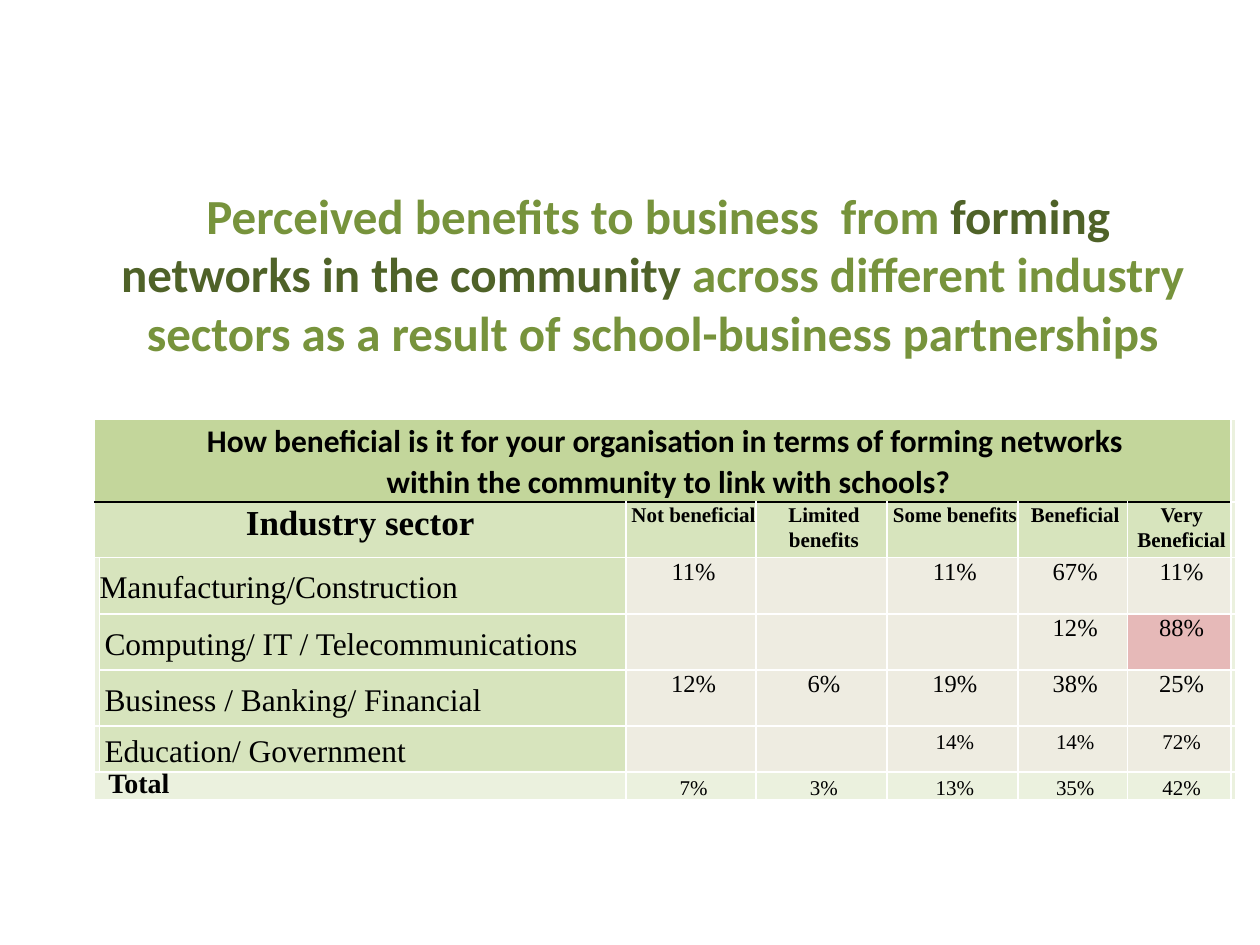
"""Build a slide on business benefits of forming community networks."""
from lxml.etree import SubElement
from pptx import Presentation
from pptx.dml.color import RGBColor
from pptx.enum.text import MSO_ANCHOR, PP_ALIGN
from pptx.oxml import parse_xml
from pptx.oxml.ns import nsdecls, qn
from pptx.util import Inches, Pt

COLORS = {
    "title": "77933C", "emphasis": "4F6228", "text": "000000",
    "question": "C3D69B", "label": "D7E4BD", "value": "EEECE1",
    "total": "EBF1DE", "highlight": "E6B9B8", "grid": "FFFFFF",
}
SERIF = "Times New Roman"
COLUMN_SHARES = [0.4, 41.8, 10.3, 10.4, 10.4, 8.7, 8.2, 0.3]
ROW_SHARES = [8.4, 5.9, 5.95, 5.95, 5.95, 4.85, 2.95]
QUESTION = [
    "How beneficial is it for your organisation in terms of forming networks",
    " within the community to link with schools?",
]
RATINGS = ["Not beneficial ", "Limited benefits", "Some benefits ", "Beneficial", "Very Beneficial"]
SECTORS = [
    ("Manufacturing/Construction", ["11%", "", "11%", "67%", "11%"]),
    ("Computing/ IT / Telecommunications", ["", "", "", "12%", "88%"]),
    ("Business / Banking/ Financial", ["12%", "6%", "19%", "38%", "25%"]),
    ("Education/ Government", ["", "", "14%", "14%", "72%"]),
]
TOTALS = ["7%", "3%", "13%", "35%", "42%"]


def write(paragraph, text, *, size, font=SERIF, color="text", bold=False,
          align=PP_ALIGN.CENTER, spacing=1.0):
    paragraph.alignment = align
    paragraph.line_spacing = spacing
    run = paragraph.add_run()
    run.text = text
    run.font.size = Pt(size)
    run.font.name = font
    run.font.bold = bold
    run.font.color.rgb = RGBColor.from_string(COLORS[color])


class SlideBuilder:
    def __init__(self, deck):
        self.width, self.height = deck.slide_width, deck.slide_height
        self.slide = deck.slides.add_slide(deck.slide_layouts[6])

    def across(self, percent):
        return round(self.width * percent / 100)

    def down(self, percent):
        return round(self.height * percent / 100)

    def heading(self, left, top, width, height, parts):
        box = self.slide.shapes.add_textbox(
            self.across(left), self.down(top), self.across(width), self.down(height))
        box.text_frame.word_wrap = True
        for text, color in parts:
            write(box.text_frame.paragraphs[0], text, size=28, font="Calibri",
                  color=color, bold=True)

    def table(self, left, top, columns, rows):
        frame = self.slide.shapes.add_table(
            len(rows), len(columns), self.across(left), self.down(top),
            self.across(sum(columns)), self.down(sum(rows)))
        grid = frame.table
        for column, share in zip(grid.columns, columns):
            column.width = self.across(share)
        for row, share in zip(grid.rows, rows):
            row.height = self.down(share)
        return grid

    def cell(self, cell, lines=(), *, fill, indent=0.04, anchor=MSO_ANCHOR.TOP, **style):
        cell.margin_left = Inches(indent)
        cell.margin_right = cell.margin_top = cell.margin_bottom = 0
        cell.vertical_anchor = anchor
        cell.fill.solid()
        cell.fill.fore_color.rgb = RGBColor.from_string(COLORS[fill])
        frame = cell.text_frame
        for index, line in enumerate(lines):
            write(frame.add_paragraph() if index else frame.paragraphs[0], line, **style)
        if not lines:
            SubElement(frame.paragraphs[0]._p, qn("a:endParaRPr"), sz="800")

    def borders(self, cell, **sides):
        properties = cell._tc.get_or_add_tcPr()
        for index, side in enumerate("LRTB"):
            color = COLORS[sides.get(side, "grid")]
            properties.insert(index, parse_xml(
                f'<a:ln{side} {nsdecls("a")} w="12700"><a:solidFill>'
                f'<a:srgbClr val="{color}"/></a:solidFill></a:ln{side}>'))


def fill_table(builder, grid):
    last_row, last_column = len(ROW_SHARES) - 1, len(COLUMN_SHARES) - 1
    filled = {}

    def put(row, column, *lines, **style):
        builder.cell(grid.cell(row, column), [line for line in lines if line], **style)
        filled[row, column] = True

    put(0, 0, *QUESTION, fill="question", size=18, font="Calibri", bold=True, spacing=1.07)
    put(1, 0, "Industry sector", fill="label", indent=0, size=20, bold=True, spacing=1.07)
    put(last_row, 0, "Total", fill="total", indent=0.11, anchor=MSO_ANCHOR.MIDDLE,
        size=16, bold=True, align=PP_ALIGN.LEFT, spacing=Pt(16))
    for column, (rating, total) in enumerate(zip(RATINGS, TOTALS), start=2):
        put(1, column, rating, fill="label", size=12, bold=True, spacing=1.07)
        put(last_row, column, total, fill="total", size=12, spacing=Pt(16))
    for row, (sector, values) in enumerate(SECTORS, start=2):
        put(row, 1, sector, fill="label", indent=0 if row == 2 else 0.04,
            anchor=MSO_ANCHOR.MIDDLE, size=18, align=PP_ALIGN.LEFT, spacing=1.15)
        for column, value in enumerate(values, start=2):
            put(row, column, value, fill="highlight" if value == "88%" else "value",
                size=12 if row == last_row - 1 else 14, spacing=Pt(16))

    for row in range(last_row + 1):
        for column in range(last_column + 1):
            if (row, column) not in filled:
                put(row, column, fill="total", indent=0)
            rule = {0: {"B": "text"}, 1: {"T": "text"}}.get(row, {})
            builder.borders(grid.cell(row, column), **(rule if column < last_column else {}))
    for first, last in [((0, 0), (0, 6)), ((1, 0), (1, 1)), ((2, 0), (4, 0)),
                        ((last_row, 0), (last_row, 1))]:
        grid.cell(*first).merge(grid.cell(*last))


def main():
    deck = Presentation()
    deck.slide_width, deck.slide_height = Inches(10), Inches(7.5)
    builder = SlideBuilder(deck)
    fill_table(builder, builder.table(7.5, 44.4, COLUMN_SHARES, ROW_SHARES))
    builder.heading(7.5, 18.93, 88.6, 20.13, [
        (" Perceived benefits to business  from ", "title"),
        ("forming networks in the community", "emphasis"),
        (" across different industry sectors as a result of school-business partnerships", "title"),
    ])
    deck.save("out.pptx")


if __name__ == "__main__":
    main()
